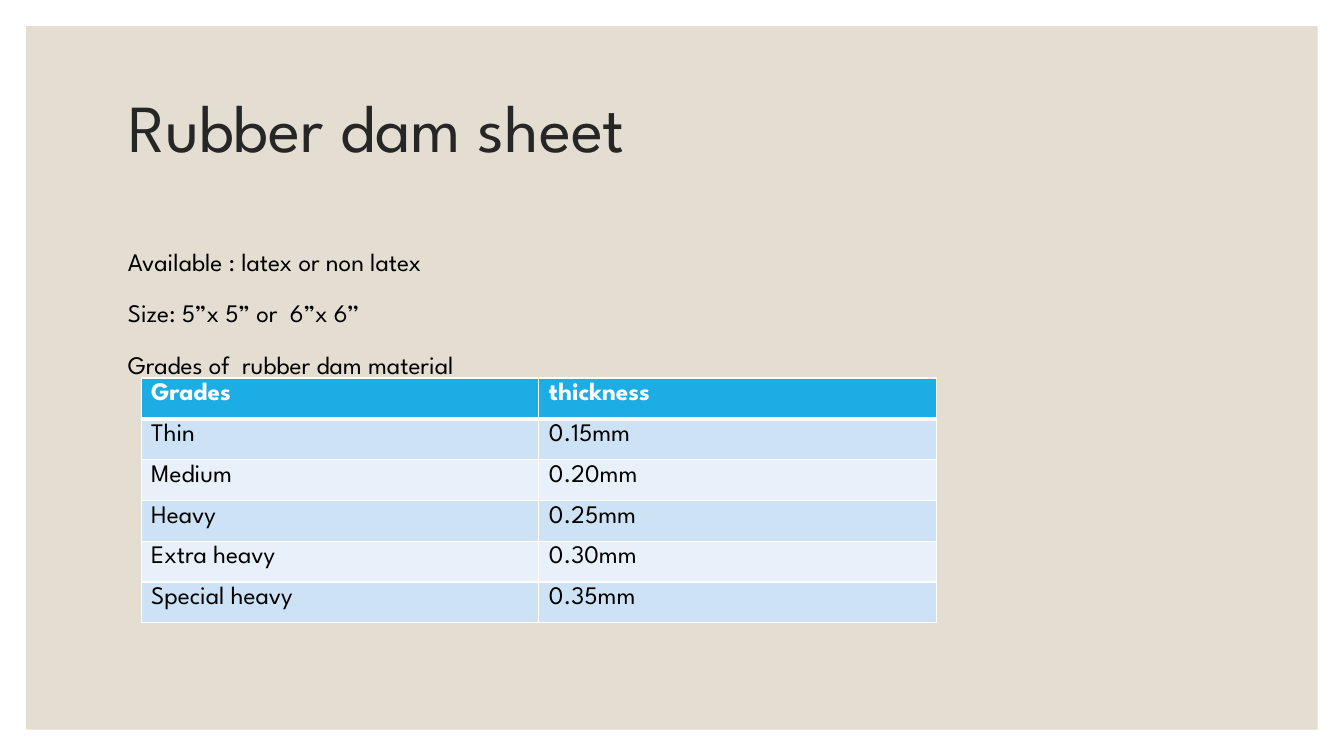
import lxml.etree
import pptx
import pptx.dml.color
import pptx.enum.shapes
import pptx.enum.text
import pptx.oxml.ns
import pptx.util

# Content
TITLE = "Rubber dam sheet"
FACTS = [
    "Available : latex or non latex",
    "Size: 5”x 5” or  6”x 6’’",
    "Grades of  rubber dam material",
]
GRADES = [
    ("Grades", "thickness"),
    ("Thin", "0.15mm"),
    ("Medium", "0.20mm"),
    ("Heavy", "0.25mm"),
    ("Extra heavy", "0.30mm"),
    ("Special heavy", "0.35mm"),
]

# Look and layout, in inches and points
FONT = "League Spartan"
COLORS = {
    "panel": "E3DED1", "title": "262626", "text": "000000", "white": "FFFFFF",
    "header": "1CADE4", "odd": "CDE3F5", "even": "E8F1FA",
}
WIDTH, HEIGHT = 13.33, 7.5
MARGIN = 0.26
TITLE_BOX = (1.17, 0.39, 11, 1.81)
FACTS_BOX = (1.17, 2.3, 11, 4.3)
TABLE_BOX = (1.4, 3.75, 7.89, 2.43)
TITLE_SIZE, TEXT_SIZE = 48, 18
THIN_LINE, HEADER_LINE = 1, 3


def color(name):
    return pptx.dml.color.RGBColor.from_string(COLORS[name])


def inches(box):
    return [pptx.util.Inches(length) for length in box]


def format_runs(paragraph, size, color_name, bold=False):
    for run in paragraph.runs:
        run.font.name = FONT
        run.font.size = pptx.util.Pt(size)
        run.font.bold = bold
        run.font.color.rgb = color(color_name)


def set_borders(cell, widths):
    properties = cell._tc.get_or_add_tcPr()
    for position, (side, width) in enumerate(widths.items()):
        line = lxml.etree.Element(pptx.oxml.ns.qn(f"a:{side}"), w=str(pptx.util.Pt(width)))
        fill = lxml.etree.SubElement(line, pptx.oxml.ns.qn("a:solidFill"))
        lxml.etree.SubElement(fill, pptx.oxml.ns.qn("a:srgbClr"), val=COLORS["white"])
        properties.insert(position, line)


presentation = pptx.Presentation()
presentation.slide_width, presentation.slide_height = inches((WIDTH, HEIGHT))
slide = presentation.slides.add_slide(presentation.slide_layouts[5])

# Background panel, behind the title
panel = slide.shapes.add_shape(
    pptx.enum.shapes.MSO_SHAPE.RECTANGLE,
    *inches((MARGIN, MARGIN, WIDTH - 2 * MARGIN, HEIGHT - 2 * MARGIN)))
panel.shadow.inherit = False
panel.fill.solid()
panel.fill.fore_color.rgb = color("panel")
panel.line.fill.background()
slide.shapes._spTree.insert(2, panel._element)

# Title
title = slide.shapes.title
title.left, title.top, title.width, title.height = inches(TITLE_BOX)
title.text_frame.text = TITLE
title.text_frame.vertical_anchor = pptx.enum.text.MSO_ANCHOR.MIDDLE
heading = title.text_frame.paragraphs[0]
heading.alignment = pptx.enum.text.PP_ALIGN.LEFT
heading.line_spacing = 0.9
format_runs(heading, TITLE_SIZE, "title")

# Facts
facts = slide.shapes.add_textbox(*inches(FACTS_BOX)).text_frame
facts.word_wrap = True
facts.text = "\n".join(FACTS)
for paragraph in facts.paragraphs:
    paragraph.space_before = pptx.util.Pt(9)
    paragraph.line_spacing = 1.3
    format_runs(paragraph, TEXT_SIZE, "text")

# Table of grades
table = slide.shapes.add_table(len(GRADES), len(GRADES[0]), *inches(TABLE_BOX)).table
for row, values in enumerate(GRADES):
    header = row == 0
    fill_name = "header" if header else ("odd" if row % 2 else "even")
    for column, value in enumerate(values):
        cell = table.cell(row, column)
        cell.text_frame.text = value
        format_runs(cell.text_frame.paragraphs[0], TEXT_SIZE,
                    "white" if header else "text", bold=header)
        cell.fill.solid()
        cell.fill.fore_color.rgb = color(fill_name)
        set_borders(cell, {
            "lnL": THIN_LINE, "lnR": THIN_LINE,
            "lnT": HEADER_LINE if row == 1 else THIN_LINE,
            "lnB": HEADER_LINE if header else THIN_LINE,
        })

presentation.save("out.pptx")
